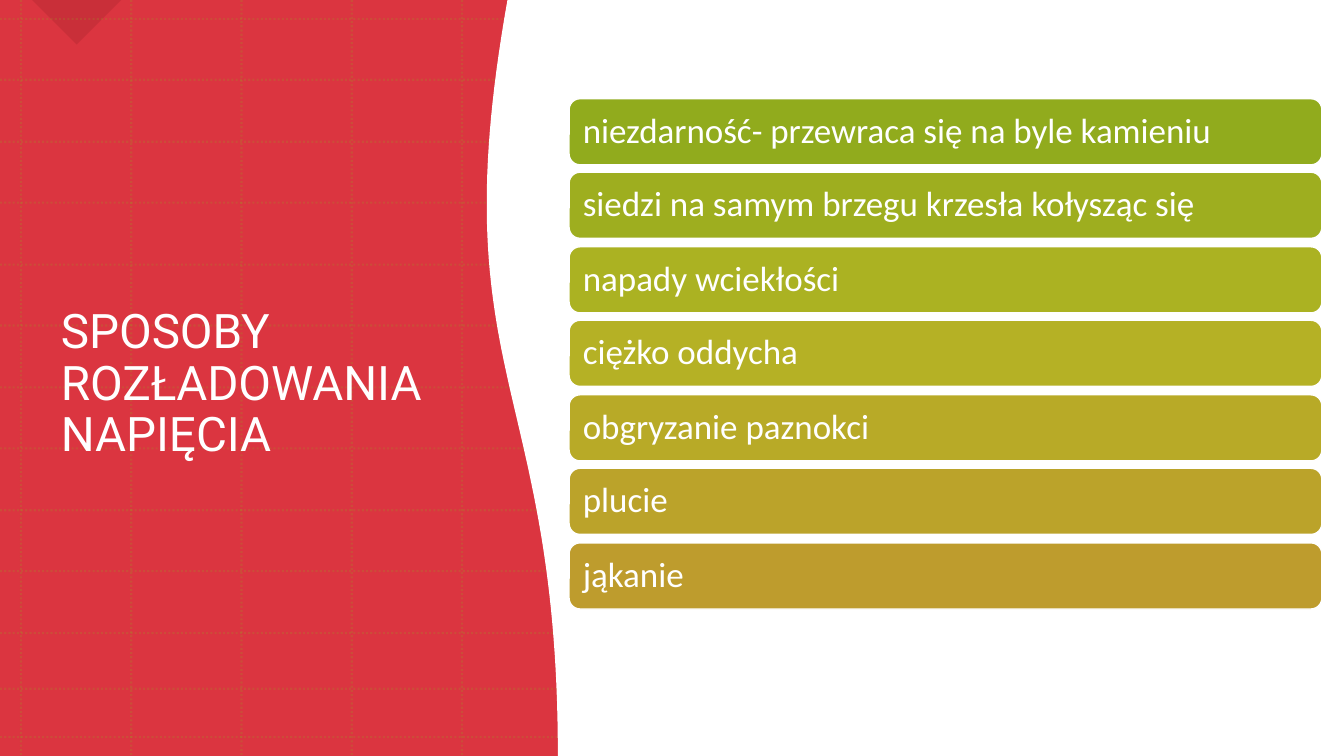
from dataclasses import dataclass

from lxml import etree
from pptx import Presentation
from pptx import util as u
from pptx.dml.color import RGBColor
from pptx.enum import dml, shapes, text
from pptx.oxml import ns

PX = 9525  # EMU per px
WIDTH, HEIGHT = 1280, 720
COLORS = {
    "red": "DB3540",
    "dark_red": "73151B",
    "green": "91AB1D",
    "white": "FFFFFF",
}


@dataclass
class Bar:
    label: str
    color: str


@dataclass
class GridLine:
    x1: int
    y1: int
    x2: int
    y2: int


BARS = [
    Bar("niezdarność- przewraca się na byle kamieniu", "91AB1D"),
    Bar("siedzi na samym brzegu krzesła kołysząc się", "9EAE1F"),
    Bar("napady wciekłości", "ABB222"),
    Bar("ciężko oddycha", "B5B125"),
    Bar("obgryzanie paznokci", "B8AA27"),
    Bar("plucie", "BBA32A"),
    Bar("jąkanie", "BE9C2D"),
]
BAR_LEFT, BAR_TOP, BAR_WIDTH, BAR_HEIGHT = 542, 94, 717, 63

COLUMNS = range(20, 441, 105)
ROWS = [18 + 117 * i // 2 for i in range(11)] + [656, 702]
GRID = [GridLine(x, 0, x, HEIGHT) for x in COLUMNS]
GRID += [GridLine(0, y, WIDTH, y) for y in ROWS]

# Bezier points of the wavy edge, bottom to top
EDGE = [(532, 720), (532, 361), (420, 359), (484, 0)]


def px(*lengths: int) -> list[u.Emu]:
    return [u.Emu(length * PX) for length in lengths]


def set_alpha(fill, percent: int) -> None:
    """Make a solid fill, of a shape or a line, partly transparent."""
    color = fill._xPr.find(".//" + ns.qn("a:srgbClr"))
    etree.SubElement(color, ns.qn("a:alpha"), val=str(percent * 1000))


def paint(shape, color: str, outline: str = "") -> None:
    shape.shadow.inherit = False
    shape.fill.solid()
    shape.fill.fore_color.rgb = RGBColor.from_string(color)
    if outline:
        shape.line.color.rgb = RGBColor.from_string(outline)
        shape.line.width = u.Pt(1)
    else:
        shape.line.fill.background()


def write(shape, words: str, *, font: str, size: int, inset: int) -> None:
    frame = shape.text_frame
    frame.word_wrap = True
    frame.vertical_anchor = text.MSO_ANCHOR.MIDDLE
    frame.margin_left, frame.margin_right = px(inset, inset)
    para = frame.paragraphs[0]
    para.alignment = text.PP_ALIGN.LEFT
    para.line_spacing = 0.9
    span = para.add_run()
    span.text = words
    span.font.name = font
    span.font.size = u.Pt(size)
    span.font.color.rgb = RGBColor.from_string(COLORS["white"])


def draw_grid_line(page, grid_line: GridLine) -> None:
    ends = px(grid_line.x1, grid_line.y1, grid_line.x2, grid_line.y2)
    connector = page.shapes.add_connector(shapes.MSO_CONNECTOR.STRAIGHT, *ends)
    line = connector.line
    line.color.rgb = RGBColor.from_string(COLORS["green"])
    line.width = u.Pt(1.5)
    line.dash_style = dml.MSO_LINE.ROUND_DOT
    set_alpha(line.fill, 20)
    etree.SubElement(connector._element.spPr, ns.qn("a:effectLst"))


def edge_point(t: float) -> tuple[int, int]:
    weights = ((1 - t) ** 3, 3 * t * (1 - t) ** 2, 3 * t * t * (1 - t), t ** 3)
    x, y = (sum(w * p[axis] for w, p in zip(weights, EDGE)) for axis in (0, 1))
    return round(x * PX), round(y * PX)


def draw_white_area(page) -> None:
    steps = 60
    builder = page.shapes.build_freeform(*px(WIDTH, 0), scale=1.0)
    points = [tuple(px(WIDTH, HEIGHT))]
    points += [edge_point(i / steps) for i in range(steps + 1)]
    builder.add_line_segments(points, close=True)
    paint(builder.convert_to_shape(), COLORS["white"], COLORS["white"])


def draw_bar(page, bar: Bar, top: int) -> None:
    box = page.shapes.add_shape(
        shapes.MSO_SHAPE.ROUNDED_RECTANGLE, *px(BAR_LEFT, top, BAR_WIDTH, BAR_HEIGHT)
    )
    paint(box, bar.color, COLORS["white"])
    write(box, bar.label, font="Calibri", size=25, inset=10)


def main() -> None:
    deck = Presentation()
    deck.slide_width, deck.slide_height = px(WIDTH, HEIGHT)
    page = deck.slides.add_slide(deck.slide_layouts[6])

    # Red backdrop with the corner triangle
    backdrop = page.shapes.add_shape(shapes.MSO_SHAPE.RECTANGLE, *px(0, 0, WIDTH, HEIGHT))
    paint(backdrop, COLORS["red"])
    corner = page.shapes.add_shape(shapes.MSO_SHAPE.RIGHT_TRIANGLE, *px(43, -30, 60, 60))
    corner.rotation = 315
    paint(corner, COLORS["dark_red"])
    set_alpha(corner.fill, 17)

    # Dotted grid
    for grid_line in GRID:
        draw_grid_line(page, grid_line)

    # Title
    title = page.shapes.add_textbox(*px(48, 76, 392, 581))
    write(title, "SPOSOBY ROZŁADOWANIA NAPIĘCIA", font="Roboto", size=34, inset=10)

    # White area and list of bars
    draw_white_area(page)
    for i, bar in enumerate(BARS):
        draw_bar(page, bar, BAR_TOP + 141 * i // 2)

    deck.save("out.pptx")


if __name__ == "__main__":
    main()
